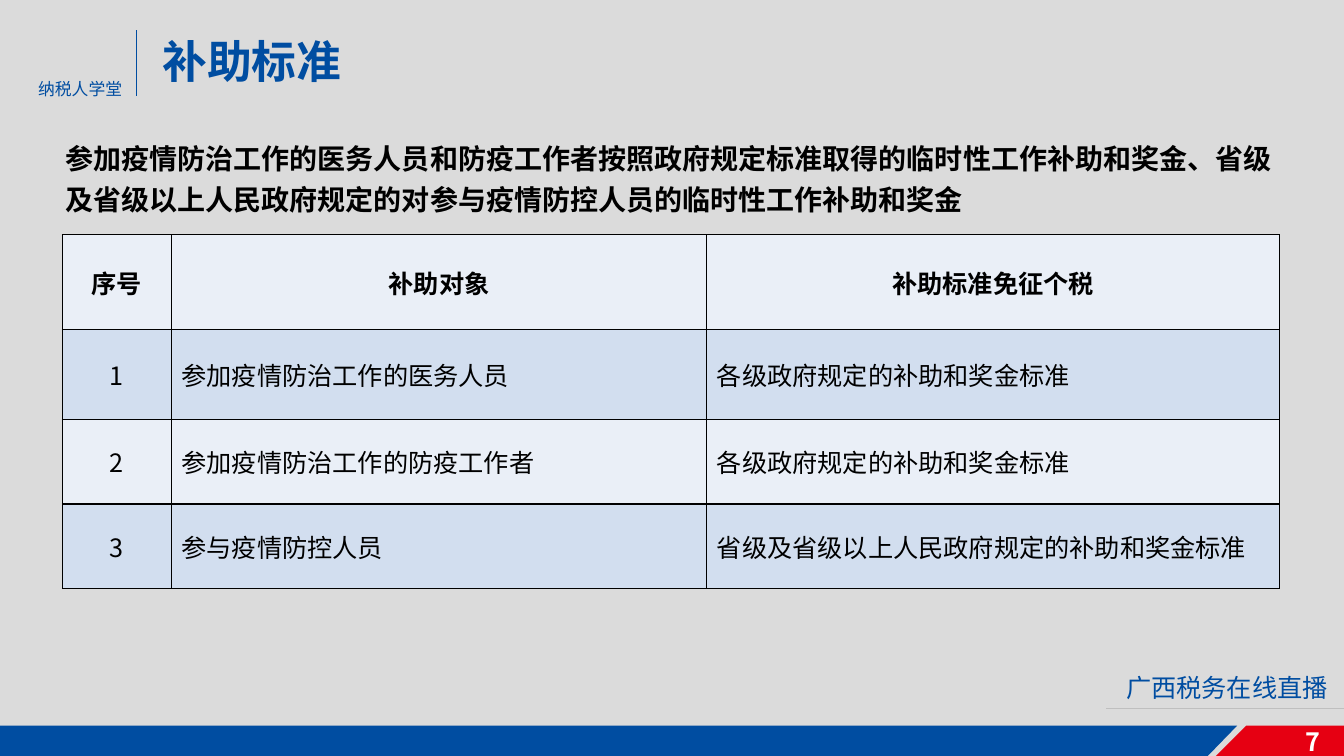
from dataclasses import dataclass

from lxml import etree
from pptx import Presentation
from pptx import util as u
from pptx.dml.color import RGBColor
from pptx.enum import shapes, text
from pptx.oxml import ns


@dataclass(frozen=True)
class Theme:
    font: str = "Noto Sans CJK SC"
    ground: str = "DBDBDB"
    blue: str = "004DA1"
    red: str = "E60012"
    rule: str = "BFBFBF"
    ink: str = "000000"
    white: str = "FFFFFF"
    bands: tuple = ("EAEFF7", "D2DEEF")
    heading: int = 32
    lead: int = 20
    body: int = 18
    small: int = 12


THEME = Theme()
WIDTH, HEIGHT = u.Inches(13.33), u.Inches(7.5)
LEFT, CENTER, RIGHT = text.PP_ALIGN.LEFT, text.PP_ALIGN.CENTER, text.PP_ALIGN.RIGHT
TOP, MIDDLE = text.MSO_ANCHOR.TOP, text.MSO_ANCHOR.MIDDLE

HEADING = ("补助标准", (11.33, 3.73, 32.93, 8.53))
LABELS = [
    ("纳税人学堂", (2.1, 9.73, 8.1, 4), dict(size=THEME.small, color=THEME.blue)),
    ("广西税务在线直播", (83.05, 88.27, 16.9, 5.33), dict(color=THEME.blue)),
    ("参加疫情防治工作的医务人员和防疫工作者按照政府规定标准取得的临时性工作补助和奖金、"
     "省级及省级以上人民政府规定的对参与疫情防控人员的临时性工作补助和奖金",
     (4.13, 17.2, 92.65, 15.2), dict(size=THEME.lead, bold=True, spacing=1.2)),
    ("7", (76.44, 95.47, 22.51, 5.33),
     dict(color=THEME.white, bold=True, align=RIGHT, anchor=MIDDLE)),
]
FOOTER_BANDS = [
    ([(0, 96), (92.05, 96), (89.87, 100), (0, 100)], THEME.blue),
    ([(92.72, 96), (100, 96), (100, 100), (90.47, 100)], THEME.red),
]
RULES = [
    ((10.13, 4), (10.13, 12.67), THEME.blue),
    ((82.3, 93.73), (100, 93.73), THEME.rule),
]
SUBSIDIES = [
    ("序号", "补助对象", "补助标准免征个税"),
    ("1", "参加疫情防治工作的医务人员", "各级政府规定的补助和奖金标准"),
    ("2", "参加疫情防治工作的防疫工作者", "各级政府规定的补助和奖金标准"),
    ("3", "参与疫情防控人员", "省级及省级以上人民政府规定的补助和奖金标准"),
]
SUBSIDY_BOX = (4.65, 31.07, 90.55, 46.8)
COLUMN_SHARES = (1.08, 5.31, 5.68)
ROW_SHARES = (0.94, 0.89, 0.84, 0.84)


def place(x, y):
    return round(WIDTH * x / 100), round(HEIGHT * y / 100)


def area(box):
    return place(*box[:2]) + place(*box[2:])


def paint(fill, color):
    fill.solid()
    fill.fore_color.rgb = RGBColor.from_string(color)


def write(frame, words, size=THEME.body, color=THEME.ink, bold=False,
          align=LEFT, anchor=TOP, spacing=1.0):
    frame.word_wrap = True
    frame.auto_size = text.MSO_AUTO_SIZE.NONE
    frame.vertical_anchor = anchor
    paragraph = frame.paragraphs[0]
    paragraph.alignment = align
    paragraph.line_spacing = spacing
    run = paragraph.add_run()
    run.text = words
    run.font.size = u.Pt(size)
    run.font.bold = bold
    run.font.name = THEME.font
    run.font.color.rgb = RGBColor.from_string(color)
    east_asian = etree.SubElement(run.font._element, ns.qn("a:ea"))
    east_asian.set("typeface", THEME.font)


def add_band(slide, points, color):
    corners = [place(*point) for point in points]
    builder = slide.shapes.build_freeform(*corners[0])
    builder.add_line_segments(corners[1:], close=True)
    band = builder.convert_to_shape()
    band.shadow.inherit = False
    paint(band.fill, color)
    band.line.fill.background()


def add_rule(slide, start, end, color):
    rule = slide.shapes.add_connector(
        shapes.MSO_CONNECTOR.STRAIGHT, *place(*start), *place(*end))
    rule.line.width = u.Pt(0.5)
    rule.line.color.rgb = RGBColor.from_string(color)
    etree.SubElement(rule._element.spPr, ns.qn("a:effectLst"))


def add_borders(cell):
    properties = cell._tc.get_or_add_tcPr()
    for position, side in enumerate(("lnL", "lnR", "lnT", "lnB")):
        border = etree.Element(ns.qn(f"a:{side}"), w=str(u.Pt(1)))
        fill = etree.SubElement(border, ns.qn("a:solidFill"))
        etree.SubElement(fill, ns.qn("a:srgbClr"), val=THEME.ink)
        properties.insert(position, border)


def add_subsidies(slide):
    left, top, width, height = area(SUBSIDY_BOX)
    table = slide.shapes.add_table(
        len(SUBSIDIES), len(COLUMN_SHARES), left, top, width, height).table
    table.horz_banding = False
    for column, share in zip(table.columns, COLUMN_SHARES):
        column.width = round(width * share / sum(COLUMN_SHARES))
    for row, share in zip(table.rows, ROW_SHARES):
        row.height = round(height * share / sum(ROW_SHARES))
    for r, entries in enumerate(SUBSIDIES):
        for c, entry in enumerate(entries):
            cell = table.cell(r, c)
            write(cell.text_frame, entry, bold=r == 0,
                  align=CENTER if r == 0 or c == 0 else LEFT)
            cell.vertical_anchor = MIDDLE
            paint(cell.fill, THEME.bands[r % 2])
            add_borders(cell)


def main():
    deck = Presentation()
    deck.slide_width, deck.slide_height = WIDTH, HEIGHT
    slide = deck.slides.add_slide(deck.slide_layouts[5])
    paint(slide.background.fill, THEME.ground)
    for points, color in FOOTER_BANDS:
        add_band(slide, points, color)
    for start, end, color in RULES:
        add_rule(slide, start, end, color)
    heading = slide.shapes.title
    words, box = HEADING
    heading.left, heading.top, heading.width, heading.height = area(box)
    write(heading.text_frame, words, size=THEME.heading, color=THEME.blue, bold=True)
    for words, box, style in LABELS:
        write(slide.shapes.add_textbox(*area(box)).text_frame, words, **style)
    add_subsidies(slide)
    deck.save("out.pptx")


if __name__ == "__main__":
    main()
